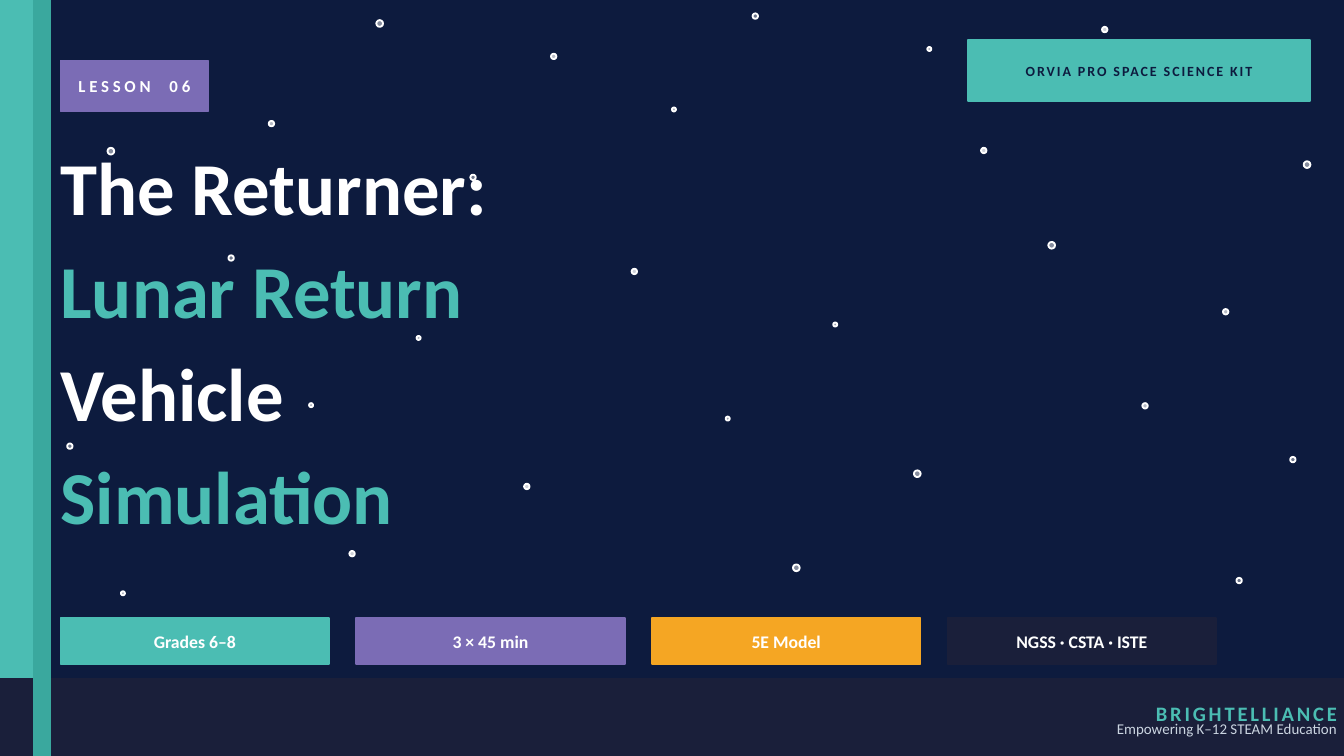
from lxml import etree
from pptx import Presentation
from pptx.dml.color import RGBColor
from pptx.enum.shapes import MSO_SHAPE
from pptx.enum.text import MSO_ANCHOR, MSO_AUTO_SIZE, PP_ALIGN
from pptx.oxml.ns import qn
from pptx.util import Inches, Pt

OVAL, RECTANGLE = MSO_SHAPE.OVAL, MSO_SHAPE.RECTANGLE
TOP, MIDDLE = MSO_ANCHOR.TOP, MSO_ANCHOR.MIDDLE
LEFT, CENTER, RIGHT = PP_ALIGN.LEFT, PP_ALIGN.CENTER, PP_ALIGN.RIGHT
FONT = "Calibri"
COLORS = {
    "night": "0D1B3E", "ink": "1A1F3A", "teal": "4BBDB3", "deep teal": "3AA89E",
    "purple": "7B6CB5", "orange": "F5A623", "white": "FFFFFF", "mist": "CBD5E1",
}

deck = Presentation()
deck.slide_width, deck.slide_height = Inches(10), Inches(5.625)
CELL = deck.slide_width // 100  # square grid, 100 columns wide
ROWS = deck.slide_height / CELL
MARGIN = 4.5


def add_block(kind, color, *cells):
    """Add a filled, outlined shape; cells are left, top, width, height."""
    block = page.shapes.add_shape(kind, *[round(cell * CELL) for cell in cells])
    block.shadow.inherit = False
    block.fill.solid()
    block.fill.fore_color.rgb = RGBColor.from_string(COLORS[color])
    block.line.color.rgb = RGBColor.from_string(COLORS[color])
    block.line.width = Pt(1)
    return block


def write(box, lines, size, align=CENTER, anchor=MIDDLE, bold=True, tracking=0, leading=None):
    """Fill a box with (text, color) lines; tracking is in points."""
    frame = box.text_frame
    frame.word_wrap = True
    frame.auto_size = MSO_AUTO_SIZE.NONE
    frame.vertical_anchor = anchor
    frame.margin_left = frame.margin_right = frame.margin_top = frame.margin_bottom = 0
    for number, (text, color) in enumerate(lines):
        para = frame.add_paragraph() if number else frame.paragraphs[0]
        para.alignment = align
        para.line_spacing = leading
        span = para.add_run()
        span.text = text
        span.font.name, span.font.size, span.font.bold = FONT, Pt(size), bold
        span.font.color.rgb = RGBColor.from_string(COLORS[color])
        if tracking:
            span.font._element.set("spc", str(round(tracking * 100)))


page = deck.slides.add_slide(deck.slide_layouts[5])
page.background.fill.solid()
page.background.fill.fore_color.rgb = RGBColor.from_string(COLORS["night"])

# Stars: (opacity in percent, diameter, positions)
STARS = [
    (50, 0.5, [(28, 1.5), (8, 11), (97, 12), (78, 18), (68, 35), (59, 42)]),
    (70, 0.4, [(41, 4), (20, 9), (91, 23), (85, 30), (74, 46)]),
    (40, 0.4, [(56, 1), (35, 13), (17, 19), (5, 33), (96, 34), (92, 43)]),
    (65, 0.3, [(69, 3.5), (50, 8), (31, 25), (23, 30), (9, 44)]),
    (80, 0.4, [(82, 2), (73, 11), (47, 20), (39, 36), (26, 41)]),
    (60, 0.3, [(62, 24), (54, 31)]),
]
for opacity, diameter, positions in STARS:
    for left, top in positions:
        star = add_block(OVAL, "white", left, top, diameter, diameter)
        fill_color = star.element.spPr.find(qn("a:solidFill"))[0]
        etree.SubElement(fill_color, qn("a:alpha"), val=str(opacity * 1000))

# Side bands and footer
add_block(RECTANGLE, "teal", 0, 0, 2.5, ROWS)
add_block(RECTANGLE, "ink", 0, 50.5, 100, ROWS - 50.5)
add_block(RECTANGLE, "deep teal", 2.5, 0, 1.2, ROWS)

# Labels above the title
kit_label = add_block(RECTANGLE, "teal", 72, 3, 25.5, 4.5)
write(kit_label, [("ORVIA PRO SPACE SCIENCE KIT", "night")], 7.5, tracking=1)
lesson_label = add_block(RECTANGLE, "purple", MARGIN, 4.5, 11, 3.8)
write(lesson_label, [("LESSON  06", "white")], 9, tracking=2)

# Title, brought in front of the stars
title = page.shapes.title
title.left, title.top, title.width, title.height = [
    round(cell * CELL) for cell in (MARGIN, 9.5, 63, 36)]
title.element.getparent().append(title.element)
TITLE_LINES = [("The Returner:", "white"), ("Lunar Return", "teal"),
               ("Vehicle", "white"), ("Simulation", "teal")]
write(title, TITLE_LINES, 40, align=LEFT, anchor=TOP, leading=1.15)

# Row of lesson facts
FACTS = [("Grades 6–8", "teal"), ("3 × 45 min", "purple"),
         ("5E Model", "orange"), ("NGSS · CSTA · ISTE", "ink")]
FACT_WIDTH, FACT_GAP = 20, 2
for column, (fact, color) in enumerate(FACTS):
    left = MARGIN + column * (FACT_WIDTH + FACT_GAP)
    tag = add_block(RECTANGLE, color, left, 46, FACT_WIDTH, 3.4)
    write(tag, [(fact, "white")], 9.5)

# Footer text, right-aligned to column 99.5
FOOTER = [
    ("BRIGHTELLIANCE", "teal", 51, 24.5, 4.2, {"size": 11, "tracking": 1.5}),
    ("Empowering K–12 STEAM Education", "mist", 52.8, 44.5, 2.8, {"size": 8, "bold": False}),
]
for text, color, top, width, height, style in FOOTER:
    box = page.shapes.add_textbox(
        *[round(cell * CELL) for cell in (99.5 - width, top, width, height)])
    write(box, [(text, color)], align=RIGHT, **style)

deck.save("out.pptx")
